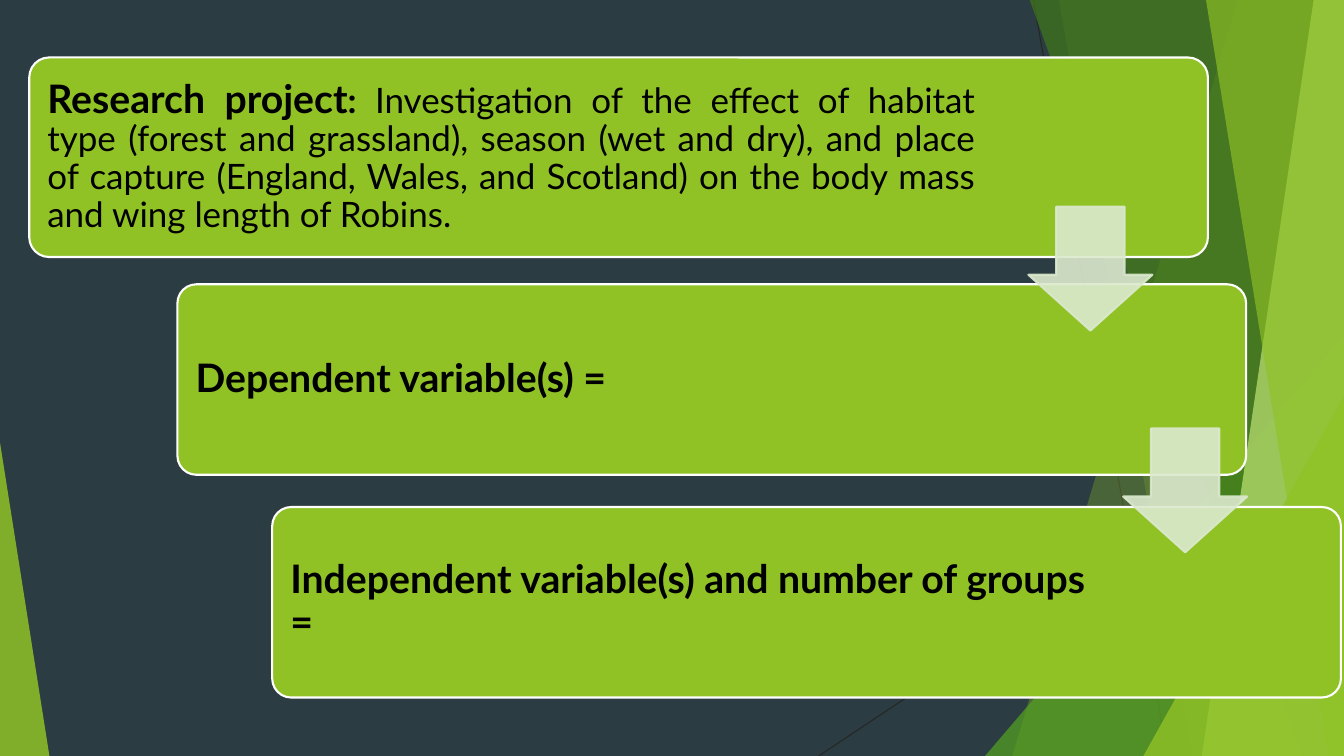
from lxml import etree
from pptx import Presentation
from pptx import util as u
from pptx.dml import color
from pptx.enum import shapes, text
from pptx.oxml import ns

WIDTH, HEIGHT = 13.33, 7.5
GREEN = "90C226"
PRESET = shapes.MSO_SHAPE


def rgb(value):
    """Turn a hex string into a colour."""
    return color.RGBColor.from_string(value)


def inches(*values):
    """Convert several lengths to inches."""
    return [u.Inches(value) for value in values]


def paint(fill, value, opacity=100):
    """Apply a solid fill with the given opacity in percent."""
    fill.solid()
    fill.fore_color.rgb = rgb(value)
    if opacity < 100:
        for node in fill._xPr.iter(ns.qn("a:srgbClr")):
            etree.SubElement(node, ns.qn("a:alpha"), val=str(opacity * 1000))


def style(shape, fill, opacity=100, line=None):
    """Give a shape its fill and outline, without a shadow."""
    shape.shadow.inherit = False
    paint(shape.fill, fill, opacity)
    if line:
        shape.line.width = u.Pt(1.5)
        paint(shape.line.fill, line, opacity)
    else:
        shape.line.fill.background()


def add_preset(page, kind, box, adjustments, fill, **look):
    """Add a styled preset shape in a box given in inches."""
    shape = page.shapes.add_shape(kind, *inches(*box))
    for index, value in enumerate(adjustments):
        shape.adjustments[index] = value
    style(shape, fill, **look)


def add_thin_line(page, *ends):
    """Add a dark hairline between two points."""
    line = page.shapes.add_connector(shapes.MSO_CONNECTOR.STRAIGHT, *inches(*ends))
    line.line.width = u.Pt(0.75)
    line.line.color.rgb = rgb("262626")
    etree.SubElement(line._element.spPr, ns.qn("a:effectLst"))


def add_facet(page, top_left, bottom_left, fill, opacity):
    """Add a full-height facet that reaches the right edge."""
    corners = [(top_left, -0.01), (WIDTH, -0.01), (WIDTH, HEIGHT), (bottom_left, HEIGHT)]
    points = [inches(*corner) for corner in corners]
    builder = page.shapes.build_freeform(*points[0])
    builder.add_line_segments(points[1:], close=True)
    style(builder.convert_to_shape(), fill, opacity)


def add_corner(page, left, top, width, apex, fill, opacity):
    """Add a triangle that stands on the bottom edge."""
    box = (left, top, width, HEIGHT - top)
    add_preset(page, PRESET.ISOSCELES_TRIANGLE, box, [apex], fill, opacity=opacity)


def add_backdrop(page):
    """Draw the dark background and its green facets."""
    paint(page.background.fill, "2C3C43")
    add_thin_line(page, 10.25, 0, 11.58, HEIGHT)
    add_thin_line(page, WIDTH, 4.03, 8.12, HEIGHT)
    add_facet(page, 12.28, 10.04, GREEN, 30)
    add_facet(page, 10.5, 11.83, GREEN, 20)
    add_corner(page, 9.77, 3.33, 3.56, 1, "54A021", 72)
    add_facet(page, 10.21, 12.91, "3F7819", 70)
    add_facet(page, 13.03, 11.92, "C0E474", 70)
    add_facet(page, 11.96, 13.18, GREEN, 65)
    add_corner(page, 11.34, 3.93, 1.99, 1, GREEN, 80)
    add_corner(page, 0, 4.39, 0.49, 0, GREEN, 85)


def add_span(para, words, size=28, bold=True):
    """Add a black run of text to a paragraph."""
    span = para.add_run()
    span.text = words
    span.font.name = "Lato"
    span.font.size = u.Pt(size)
    span.font.bold = bold
    span.font.color.rgb = rgb("000000")


def add_step(page, box, text_width, spans, align=text.PP_ALIGN.LEFT):
    """Draw one rounded step with its text inset from the edge."""
    left, top, width, height = box
    inset = 0.06
    add_preset(page, PRESET.ROUNDED_RECTANGLE, box, [0.1], GREEN, line="FFFFFF")
    label = page.shapes.add_textbox(
        *inches(left + inset, top + inset, text_width, height - 2 * inset))
    frame = label.text_frame
    frame.word_wrap = True
    frame.vertical_anchor = text.MSO_ANCHOR.MIDDLE
    frame.margin_left = frame.margin_right = u.Inches(0.12)
    frame.margin_top = frame.margin_bottom = u.Inches(0.12)
    para = frame.paragraphs[0]
    para.alignment = align
    para.line_spacing = 0.9
    for words, look in spans:
        add_span(para, words, **look)


def add_arrow(page, left, top):
    """Draw a pale arrow that leads to the next step."""
    add_preset(page, PRESET.DOWN_ARROW, (left, top, 1.23, 1.23), [0.55, 0.45],
               "DBE9CD", opacity=90, line="DBE9CD")


def add_steps(page):
    """Draw the staircase of three steps and two arrows."""
    add_step(page, (0.29, 0.57, 11.69, 1.98), 9.44, [
        ("Research project", {}),
        (": ", {"size": 25}),
        ("Investigation of the effect of habitat type (forest and grassland), "
         "season (wet and dry), and place of capture (England, Wales, and Scotland) "
         "on the body mass and wing length of Robins.", {"size": 25, "bold": False}),
    ], align=text.PP_ALIGN.JUSTIFY)
    labels = ["Dependent variable(s) =", "Independent variable(s) and number of groups ="]
    for index, words in enumerate(labels):
        box = (1.76 + 0.94 * index, 2.82 + 2.21 * index, 10.6, 1.89)
        add_step(page, box, 8.33, [(words, {})])
    for index in range(2):
        add_arrow(page, 10.2 + 0.94 * index, 2.05 + 2.2 * index)


def main():
    """Build the deck and save it."""
    deck = Presentation()
    deck.slide_width, deck.slide_height = inches(WIDTH, HEIGHT)
    page = deck.slides.add_slide(deck.slide_layouts[6])
    add_backdrop(page)
    add_steps(page)
    deck.save("out.pptx")


if __name__ == "__main__":
    main()
